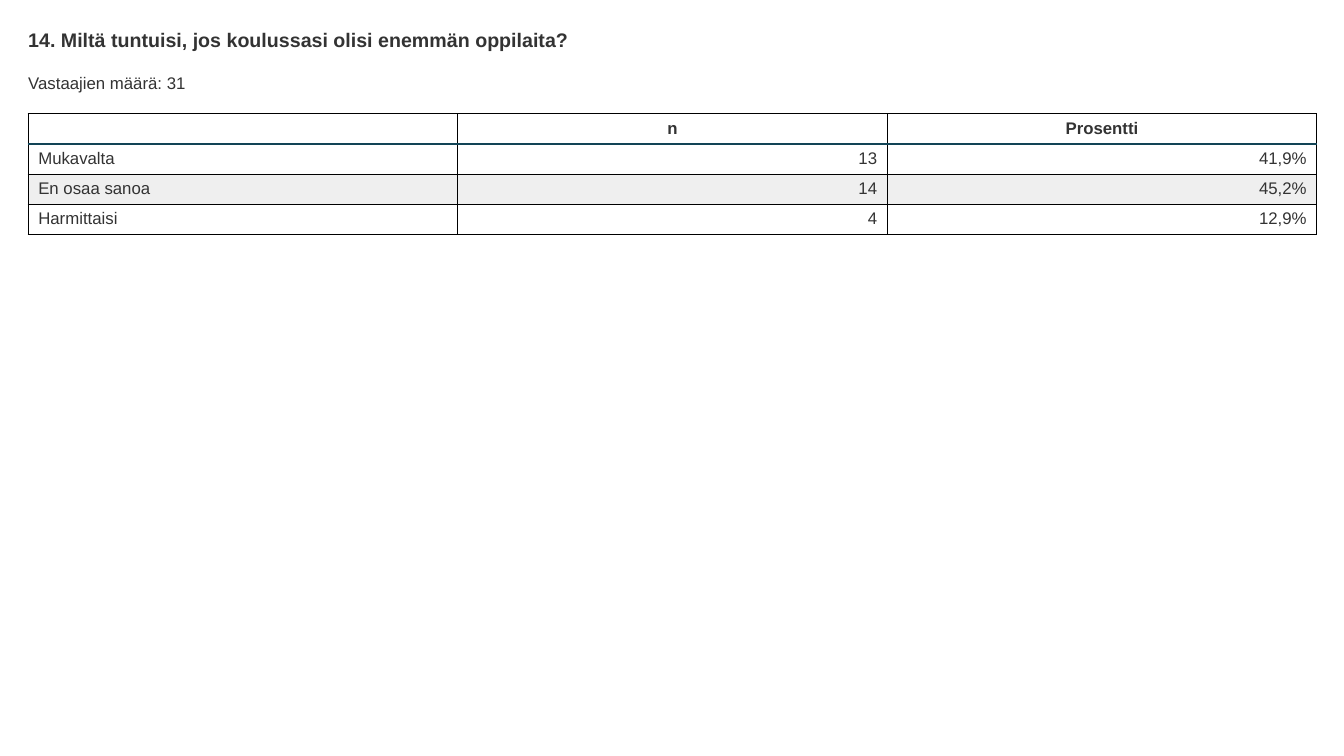
from lxml import etree
from pptx import Presentation
from pptx import util as u
from pptx.dml.color import RGBColor
from pptx.enum import text
from pptx.oxml.ns import qn

INK = "333333"
ANSWERS = [
    ("", "n", "Prosentti"),
    ("Mukavalta", "13", "41,9%"),
    ("En osaa sanoa", "14", "45,2%"),
    ("Harmittaisi", "4", "12,9%"),
]


def colour(value):
    return RGBColor.from_string(value)


def style(paragraph, size, bold=False, align=text.PP_ALIGN.LEFT):
    paragraph.alignment = align
    paragraph.font.name = "Arial"
    paragraph.font.size = u.Pt(size)
    paragraph.font.bold = bold
    paragraph.font.color.rgb = colour(INK)


def write_line(holder, wording, left, top, width, height, size, bold=False):
    holder.left, holder.top = u.Inches(left), u.Inches(top)
    holder.width, holder.height = u.Inches(width), u.Inches(height)
    frame = holder.text_frame
    frame.text = wording
    frame.word_wrap = True
    frame.auto_size = text.MSO_AUTO_SIZE.NONE
    frame.vertical_anchor = text.MSO_ANCHOR.TOP
    frame.margin_left = frame.margin_right = 0
    frame.margin_top = frame.margin_bottom = 0
    style(frame.paragraphs[0], size, bold)


def add_border(cell, side, value, points):
    line = etree.SubElement(cell._tc.get_or_add_tcPr(), qn(f"a:ln{side}"), w=str(u.Pt(points)))
    fill = etree.SubElement(line, qn("a:solidFill"))
    etree.SubElement(fill, qn("a:srgbClr"), val=value)


def fill_cell(cell, wording, row, column):
    for side in "LRTB":
        under_header = (row, side) in ((0, "B"), (1, "T"))
        add_border(cell, side, "124456" if under_header else "000000", 2 if under_header else 1)
    if row == 2:
        cell.fill.solid()
        cell.fill.fore_color.rgb = colour("EFEFEF")
    else:
        cell.fill.background()
    cell.text = wording
    if row == 0:
        align = text.PP_ALIGN.CENTER
    else:
        align = text.PP_ALIGN.RIGHT if column else text.PP_ALIGN.LEFT
    paragraph = cell.text_frame.paragraphs[0]
    style(paragraph, 12, row == 0, align)
    paragraph._p.get_or_add_endParaRPr().set("sz", "1200")


def add_answers(slide, left, top, width, row_height):
    rows, columns = len(ANSWERS), len(ANSWERS[0])
    answers = slide.shapes.add_table(
        rows, columns, u.Inches(left), u.Inches(top), u.Inches(width), u.Inches(row_height * rows)
    ).table
    answers.first_row = answers.horz_banding = False
    for row, values in enumerate(ANSWERS):
        for column, value in enumerate(values):
            fill_cell(answers.cell(row, column), value, row, column)


def add_question(deck, left, top, width):
    slide = deck.slides.add_slide(deck.slide_layouts[5])
    write_line(
        slide.shapes.title, "14. Miltä tuntuisi, jos koulussasi olisi enemmän oppilaita?",
        left, top, width, 0.23, 14, True,
    )
    respondents = slide.shapes.add_textbox(0, 0, 0, 0)
    write_line(respondents, "Vastaajien määrä: 31", left, top + 0.44, width, 0.2, 12)
    add_answers(slide, left, top + 0.85, width, 0.3)


def main():
    deck = Presentation()
    deck.slide_width, deck.slide_height = u.Inches(13.33), u.Inches(7.5)
    add_question(deck, 0.28, 0.28, 12.78)
    deck.save("out.pptx")


if __name__ == "__main__":
    main()
